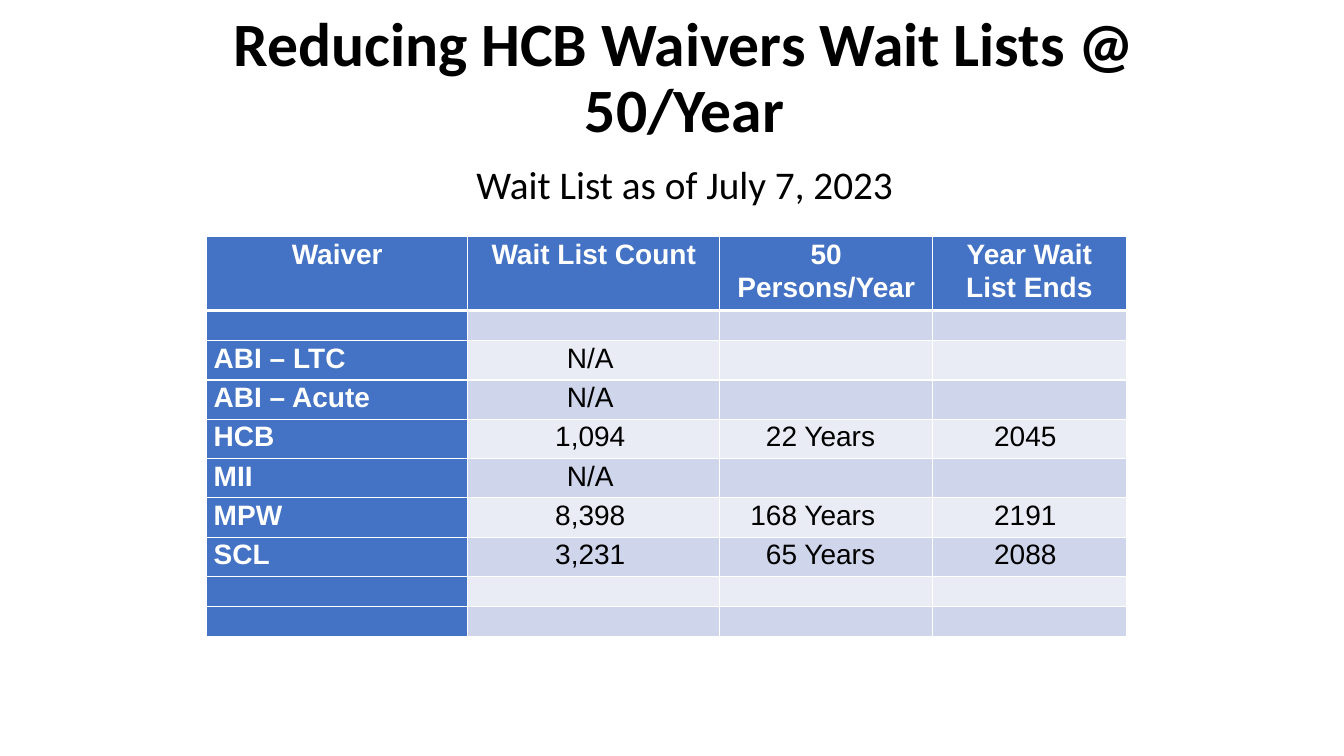
"""Build a slide with a table of waiver wait lists."""
import dataclasses

import lxml.etree
import pptx
import pptx.dml.color
import pptx.enum.text
import pptx.oxml.ns
import pptx.slide
import pptx.table
import pptx.text.text
import pptx.util

Inches = pptx.util.Inches
Pt = pptx.util.Pt
RGBColor = pptx.dml.color.RGBColor
Align = pptx.enum.text.PP_ALIGN

BLACK = RGBColor(0x00, 0x00, 0x00)
WHITE = RGBColor(0xFF, 0xFF, 0xFF)
BLUE = RGBColor(0x44, 0x72, 0xC4)
BANDS = (RGBColor(0xE9, 0xEB, 0xF5), RGBColor(0xCF, 0xD5, 0xEA))


@dataclasses.dataclass(frozen=True)
class Column:
    head: str
    width: float
    align: Align
    right: float


@dataclasses.dataclass(frozen=True)
class Waiver:
    name: str = ""
    count: str = ""
    years: str = ""
    end: str = ""

    @property
    def height(self) -> float:
        return 0.39 if self.name else 0.3


COLUMNS = (
    Column("Waiver", 2.59, Align.LEFT, 0.07),
    Column("Wait List Count", 2.5, Align.CENTER, 0.14),
    Column("50 Persons/Year", 2.11, Align.RIGHT, 0.57),
    Column("Year Wait List Ends", 1.92, Align.CENTER, 0.15),
)
WAIVERS = (
    Waiver(),
    Waiver("ABI – LTC", "N/A"),
    Waiver("ABI – Acute", "N/A"),
    Waiver("HCB", "1,094", "22 Years", "2045"),
    Waiver("MII", "N/A"),
    Waiver("MPW", "8,398", "168 Years", "2191"),
    Waiver("SCL", "3,231", "65 Years", "2088"),
    Waiver(),
    Waiver(),
)
HEAD = 0.73


def style(para: pptx.text.text._Paragraph, face: str, size: float,
          color: RGBColor, bold: bool, align: Align, space: float) -> None:
    para.font.name = face
    para.font.size = Pt(size)
    para.font.color.rgb = color
    para.font.bold = bold
    para.alignment = align
    para.line_spacing = space


def edge(cell: pptx.table._Cell, base: float) -> None:
    props = cell._tc.get_or_add_tcPr()
    qn = pptx.oxml.ns.qn
    sides = (("lnL", 1), ("lnR", 1), ("lnT", 1), ("lnB", base))
    for spot, (side, width) in enumerate(sides):
        line = lxml.etree.Element(qn(f"a:{side}"), w=str(Pt(width)))
        fill = lxml.etree.SubElement(line, qn("a:solidFill"))
        lxml.etree.SubElement(fill, qn("a:srgbClr"), val=str(WHITE))
        props.insert(spot, line)


def fill_cell(cell: pptx.table._Cell, text: str, fill: RGBColor, color: RGBColor,
              bold: bool, align: Align, right: float, base: float) -> None:
    cell.fill.solid()
    cell.fill.fore_color.rgb = fill
    cell.margin_left, cell.margin_right = Inches(0.07), Inches(right)
    cell.margin_top = cell.margin_bottom = 0
    cell.text = text
    style(cell.text_frame.paragraphs[0], "Arial", 20 if text else 12,
          color, bold, align, 1.07)
    edge(cell, base)


def add_title(slide: pptx.slide.Slide) -> None:
    title = slide.shapes.title
    title.left, title.top = Inches(0.92), Inches(0.4)
    title.width, title.height = Inches(11.5), Inches(1.45)
    frame = title.text_frame
    frame.word_wrap = True
    frame.auto_size = pptx.enum.text.MSO_AUTO_SIZE.NONE
    frame.vertical_anchor = pptx.enum.text.MSO_ANCHOR.MIDDLE
    frame.margin_left, frame.margin_right = Inches(0.6), Inches(0.36)
    frame.margin_top, frame.margin_bottom = Inches(0.05), Inches(0.11)
    frame.text = "Reducing HCB Waivers Wait Lists @ 50/Year\nWait List as of July 7, 2023"
    main, date = frame.paragraphs
    style(main, "Calibri", 44, BLACK, True, Align.CENTER, 0.9)
    style(date, "Calibri", 28, BLACK, False, Align.CENTER, 0.9)
    date.space_before = Pt(13.5)


def add_waits(slide: pptx.slide.Slide) -> None:
    heights = [HEAD] + [item.height for item in WAIVERS]
    widths = [col.width for col in COLUMNS]
    table = slide.shapes.add_table(
        len(heights), len(widths), Inches(2.05), Inches(2.35),
        Inches(sum(widths)), Inches(sum(heights))).table
    for row, height in zip(table.rows, heights):
        row.height = Inches(height)
    for x, col in enumerate(COLUMNS):
        table.columns[x].width = Inches(col.width)
        fill_cell(table.cell(0, x), col.head, BLUE, WHITE, True,
                  Align.CENTER, 0.07, 3)
        for y, item in enumerate(WAIVERS, 1):
            first = x == 0
            fill_cell(table.cell(y, x), dataclasses.astuple(item)[x],
                      BLUE if first else BANDS[y % 2],
                      WHITE if first else BLACK, first, col.align, col.right, 1)


def main() -> None:
    deck = pptx.Presentation()
    deck.slide_width, deck.slide_height = Inches(13.33), Inches(7.5)
    slide = deck.slides.add_slide(deck.slide_layouts[5])
    add_title(slide)
    add_waits(slide)
    deck.save("out.pptx")


if __name__ == "__main__":
    main()
